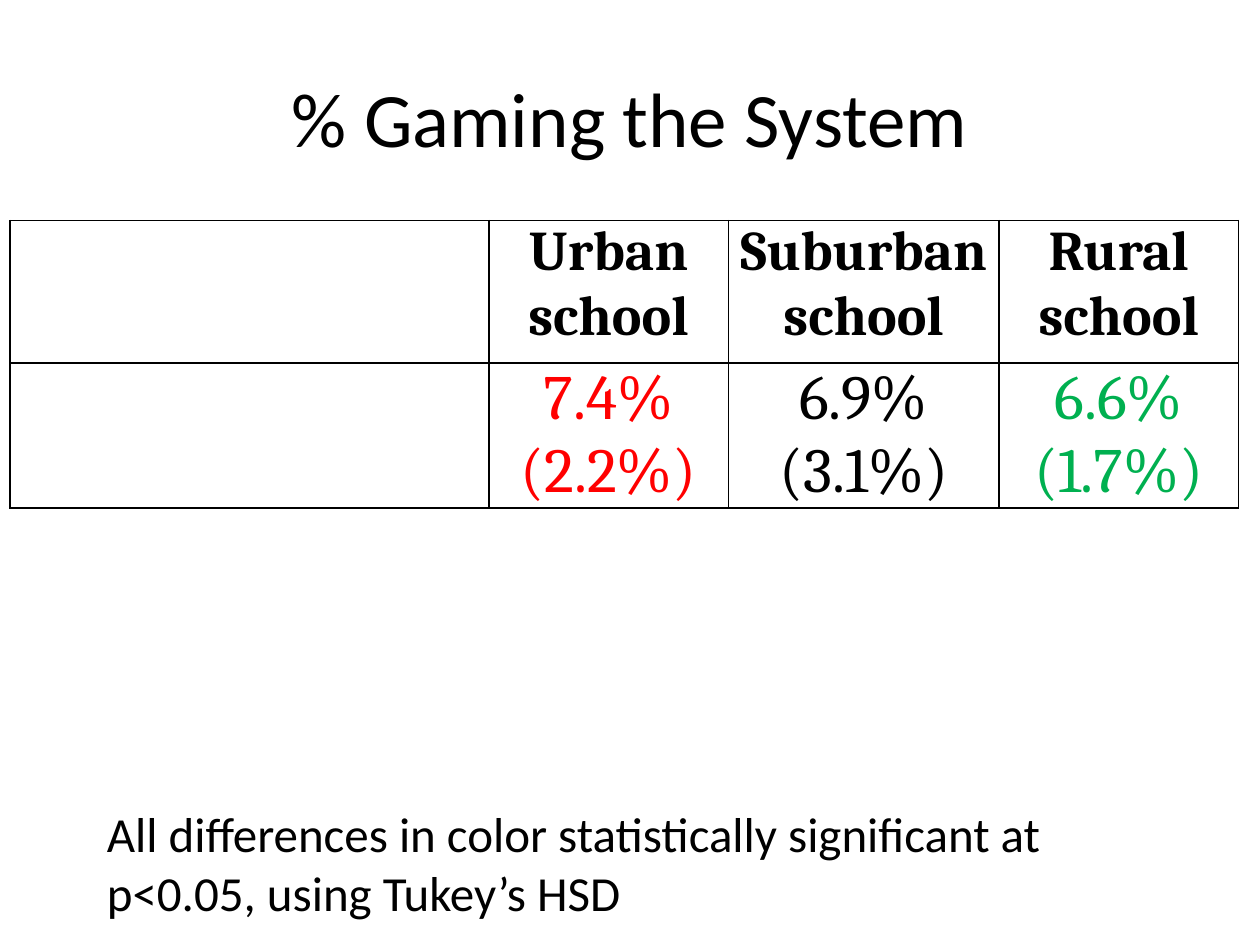
from lxml import etree
from pptx import Presentation
from pptx import util as u
from pptx.dml.color import RGBColor
from pptx.enum import text
from pptx.oxml import ns

THEME = {
    "ink": "000000", "high": "FF0000", "low": "00B050",
    "title": 44, "header": 32, "value": 36, "note": 28,
    "sans": "Calibri", "serif": "Cambria", "border": 1,
}


def write(frame, words, size, face, color="ink", bold=False, align="LEFT"):
    frame.word_wrap = True
    frame.text = words
    paragraph = frame.paragraphs[0]
    paragraph.alignment = getattr(text.PP_ALIGN, align)
    paragraph.font.size = u.Pt(THEME[size])
    paragraph.font.name = THEME[face]
    paragraph.font.bold = bold
    paragraph.font.color.rgb = RGBColor.from_string(THEME[color])


def outline(cell):
    properties = cell._tc.get_or_add_tcPr()
    for position, side in enumerate(("lnL", "lnR", "lnT", "lnB")):
        line = etree.Element(ns.qn(f"a:{side}"), w=str(u.Pt(THEME["border"])))
        fill = etree.SubElement(line, ns.qn("a:solidFill"))
        etree.SubElement(fill, ns.qn("a:srgbClr"), val=THEME["ink"])
        properties.insert(position, line)


deck = Presentation()
deck.slide_width, deck.slide_height = u.Inches(10), u.Inches(7.5)
slide = deck.slides.add_slide(deck.slide_layouts[5])

heading = slide.shapes.title
heading.left, heading.top = u.Inches(0.5), u.Inches(0.3)
heading.width, heading.height = u.Inches(9), u.Inches(1.25)
heading.text_frame.vertical_anchor = text.MSO_ANCHOR.MIDDLE
write(heading.text_frame, "% Gaming the System", "title", "sans", align="CENTER")

columns = [3.8, 1.9, 2.15, 1.9]
rows = [1.13, 1.15]
schools = [
    ("Urban school", "7.4% (2.2%)", "high"),
    ("Suburban school", "6.9% (3.1%)", "ink"),
    ("Rural school", "6.6% (1.7%)", "low"),
]
gaming = slide.shapes.add_table(
    len(rows), len(columns), u.Inches(0.08), u.Inches(1.75),
    u.Inches(sum(columns)), u.Inches(sum(rows))).table
gaming.first_row = gaming.horz_banding = False
for column, width in zip(gaming.columns, columns):
    column.width = u.Inches(width)
for row, height in zip(gaming.rows, rows):
    row.height = u.Inches(height)
for cell in gaming.iter_cells():
    cell.fill.background()
    cell.margin_left = cell.margin_right = u.Inches(0.07)
    cell.margin_top = cell.margin_bottom = 0
    outline(cell)
for index, (school, share, color) in enumerate(schools, start=1):
    write(gaming.cell(0, index).text_frame, school, "header", "serif",
          bold=True, align="CENTER")
    write(gaming.cell(1, index).text_frame, share, "value", "serif",
          color, align="CENTER")

significance = slide.shapes.add_textbox(
    u.Inches(0.75), u.Inches(6.33), u.Inches(8.58), u.Inches(1.04))
significance.text_frame.auto_size = text.MSO_AUTO_SIZE.SHAPE_TO_FIT_TEXT
write(significance.text_frame,
      "All differences in color statistically significant at p<0.05, using Tukey’s HSD",
      "note", "sans")

deck.save("out.pptx")
